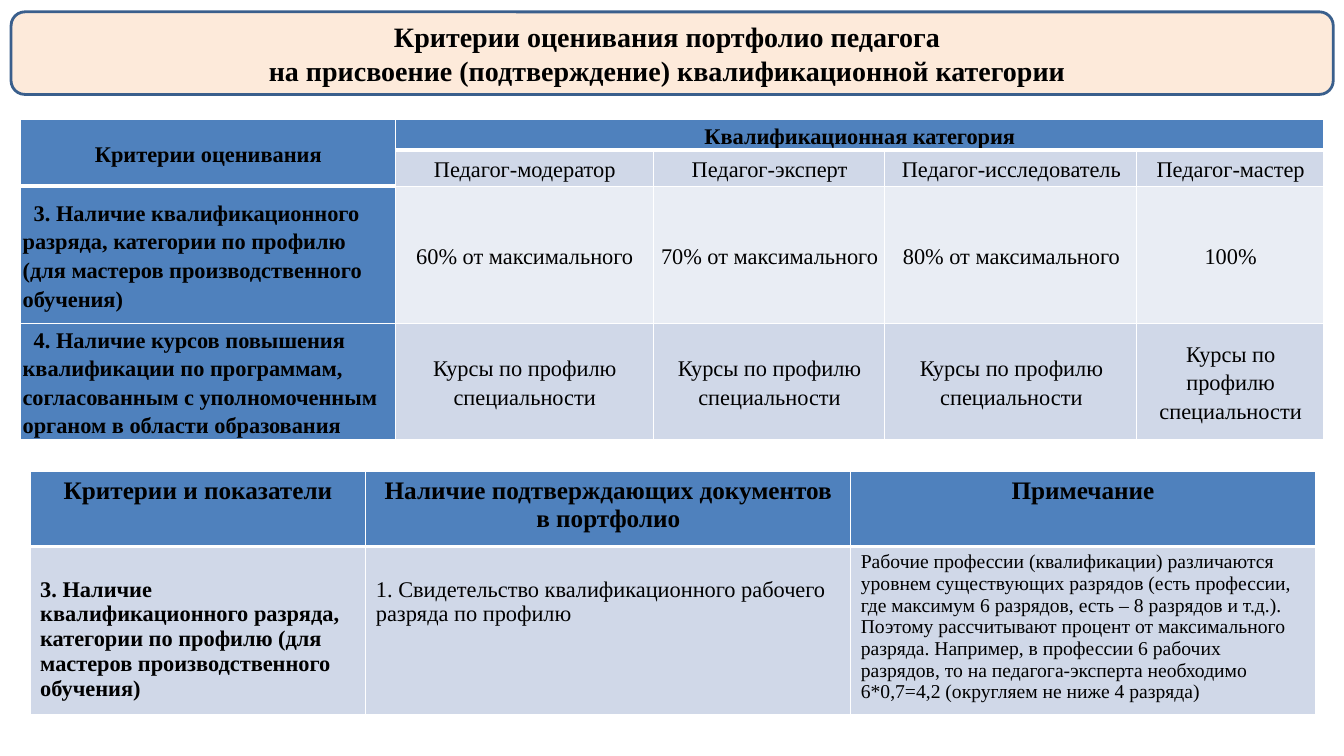
from lxml import etree
from pptx import Presentation
from pptx.dml.color import RGBColor
from pptx.enum.shapes import MSO_SHAPE
from pptx.enum.text import MSO_ANCHOR, PP_ALIGN
from pptx.oxml.ns import qn
from pptx.util import Cm, Pt

ROUNDED = MSO_SHAPE.ROUNDED_RECTANGLE
MIDDLE, TOP = MSO_ANCHOR.MIDDLE, MSO_ANCHOR.TOP
CENTER, LEFT = PP_ALIGN.CENTER, PP_ALIGN.LEFT
BLANK_LAYOUT = 6
THIN, THICK = Pt(1), Pt(3)

COLORS = {
    "text": "000000",
    "banner": "FDEADA",
    "outline": "3A5F8C",
    "header": "4F81BD",
    "band_dark": "D0D8E8",
    "band_light": "E9EDF4",
    "grid": "FFFFFF",
}

TITLE = [
    "Критерии оценивания портфолио педагога",
    "на присвоение (подтверждение) квалификационной категории",
]
COURSES = "Курсы по профилю специальности"
QUALIFICATION = ("3. Наличие квалификационного разряда, категории по профилю "
                 "(для мастеров производственного обучения)")
CATEGORY_ROWS = [
    ["Критерии оценивания", "Квалификационная категория", "", "", ""],
    ["", "Педагог-модератор", "Педагог-эксперт", "Педагог-исследователь",
     "Педагог-мастер"],
    [QUALIFICATION, "60% от максимального", "70% от максимального",
     "80% от максимального", "100%"],
    ["4. Наличие курсов повышения квалификации по программам, согласованным "
     "с уполномоченным органом в области образования"] + [COURSES] * 4,
]
DOCUMENT_ROWS = [
    ["Критерии и показатели",
     "Наличие подтверждающих документов в портфолио", "Примечание"],
    [QUALIFICATION,
     "1. Свидетельство квалификационного рабочего разряда по профилю",
     "Рабочие профессии (квалификации) различаются уровнем существующих "
     "разрядов (есть профессии, где максимум 6 разрядов, есть – 8 разрядов "
     "и т.д.). Поэтому рассчитывают процент от максимального разряда. "
     "Например, в профессии 6 рабочих разрядов, то на педагога-эксперта "
     "необходимо 6*0,7=4,2 (округляем не ниже 4 разряда)"],
]


def color(name):
    return RGBColor.from_string(COLORS[name])


class SlideBuilder:
    font = "Times New Roman"

    def __init__(self, slide):
        self.slide = slide

    def style_para(self, para, size, bold, align):
        para.alignment = align
        for span in para.runs:
            span.font.name = self.font
            span.font.size = Pt(size)
            span.font.bold = bold
            span.font.color.rgb = color("text")

    def banner(self, lines, left, top, width, height):
        box = self.slide.shapes.add_shape(
            ROUNDED, Cm(left), Cm(top), Cm(width), Cm(height))
        box.shadow.inherit = False
        box.fill.solid()
        box.fill.fore_color.rgb = color("banner")
        box.line.color.rgb = color("outline")
        box.line.width = Pt(2)
        frame = box.text_frame
        frame.word_wrap = True
        frame.vertical_anchor = MIDDLE
        frame.margin_right = Cm(0.5)
        frame.text = "\n".join(lines)
        for para in frame.paragraphs:
            self.style_para(para, 20, True, CENTER)

    def table(self, rows, left, top, widths, heights, header_depths):
        """Add a table; header_depths gives the header rows of each column."""
        frame = self.slide.shapes.add_table(
            len(rows), len(widths), Cm(left), Cm(top),
            Cm(sum(widths)), Cm(sum(heights)))
        table = frame.table
        table.first_row = table.horz_banding = False
        for column, width in zip(table.columns, widths):
            column.width = Cm(width)
        for row, height in zip(table.rows, heights):
            row.height = Cm(height)
        for r, texts in enumerate(rows):
            for c, text in enumerate(texts):
                cell = table.cell(r, c)
                depth = header_depths[c]
                cell.text = text
                band = "band_dark" if r % 2 else "band_light"
                self.fill_cell(cell, "header" if r < depth else band)
                self.border_cell(cell, THICK if r == depth else THIN,
                                 THICK if r < depth else THIN)
        return table

    def fill_cell(self, cell, name):
        cell.fill.solid()
        cell.fill.fore_color.rgb = color(name)

    def border_cell(self, cell, top, bottom):
        properties = cell._tc.get_or_add_tcPr()
        sides = [("lnL", THIN), ("lnR", THIN), ("lnT", top), ("lnB", bottom)]
        for position, (tag, width) in enumerate(sides):
            line = etree.Element(qn("a:" + tag), w=str(int(width)))
            fill = etree.SubElement(line, qn("a:solidFill"))
            etree.SubElement(fill, qn("a:srgbClr"), val=COLORS["grid"])
            properties.insert(position, line)

    def category_table(self):
        table = self.table(
            CATEGORY_ROWS, 0.51, 3, [9.45, 6.5, 5.84, 6.35, 4.7],
            [0.64, 0.91, 3.45, 2.69], [2, 1, 1, 1, 1])
        for r in range(len(CATEGORY_ROWS)):
            for c in range(len(CATEGORY_ROWS[r])):
                cell = table.cell(r, c)
                criterion = c == 0 and r > 1
                if criterion:
                    self.fill_cell(cell, "header")
                cell.vertical_anchor = MIDDLE
                cell.margin_left = cell.margin_right = Cm(0.03)
                cell.margin_top = cell.margin_bottom = Cm(0.03)
                para = cell.text_frame.paragraphs[0]
                para.line_spacing = 1.15
                para.space_after = Pt(1)
                self.style_para(para, 16, r == 0 or c == 0,
                                LEFT if criterion else CENTER)
                indent = Cm(0.28) if criterion else 0
                properties = para._p.get_or_add_pPr()
                properties.set("marL", str(int(Cm(0.03))))
                properties.set("indent", str(int(indent)))
        table.cell(0, 0).merge(table.cell(1, 0))
        table.cell(0, 1).merge(table.cell(0, 4))

    def document_table(self):
        table = self.table(DOCUMENT_ROWS, 0.76, 11.89, [8.46, 12.22, 11.71],
                           [1.88, 4.24], [1, 1, 1])
        for c, body_size in enumerate([16, 16, 14]):
            header, body = table.cell(0, c), table.cell(1, c)
            header.vertical_anchor = body.vertical_anchor = TOP
            self.style_para(header.text_frame.paragraphs[0], 18, True, CENTER)
            self.style_para(body.text_frame.paragraphs[0], body_size,
                            c == 0, LEFT)
            if c < 2:
                body.margin_top = Cm(0.77)


def main():
    deck = Presentation()
    deck.slide_width, deck.slide_height = Cm(33.87), Cm(19.05)
    page = SlideBuilder(deck.slides.add_slide(deck.slide_layouts[BLANK_LAYOUT]))
    page.banner(TITLE, 0.28, 0.3, 33.32, 2.08)
    page.category_table()
    page.document_table()
    deck.save("out.pptx")


if __name__ == "__main__":
    main()
